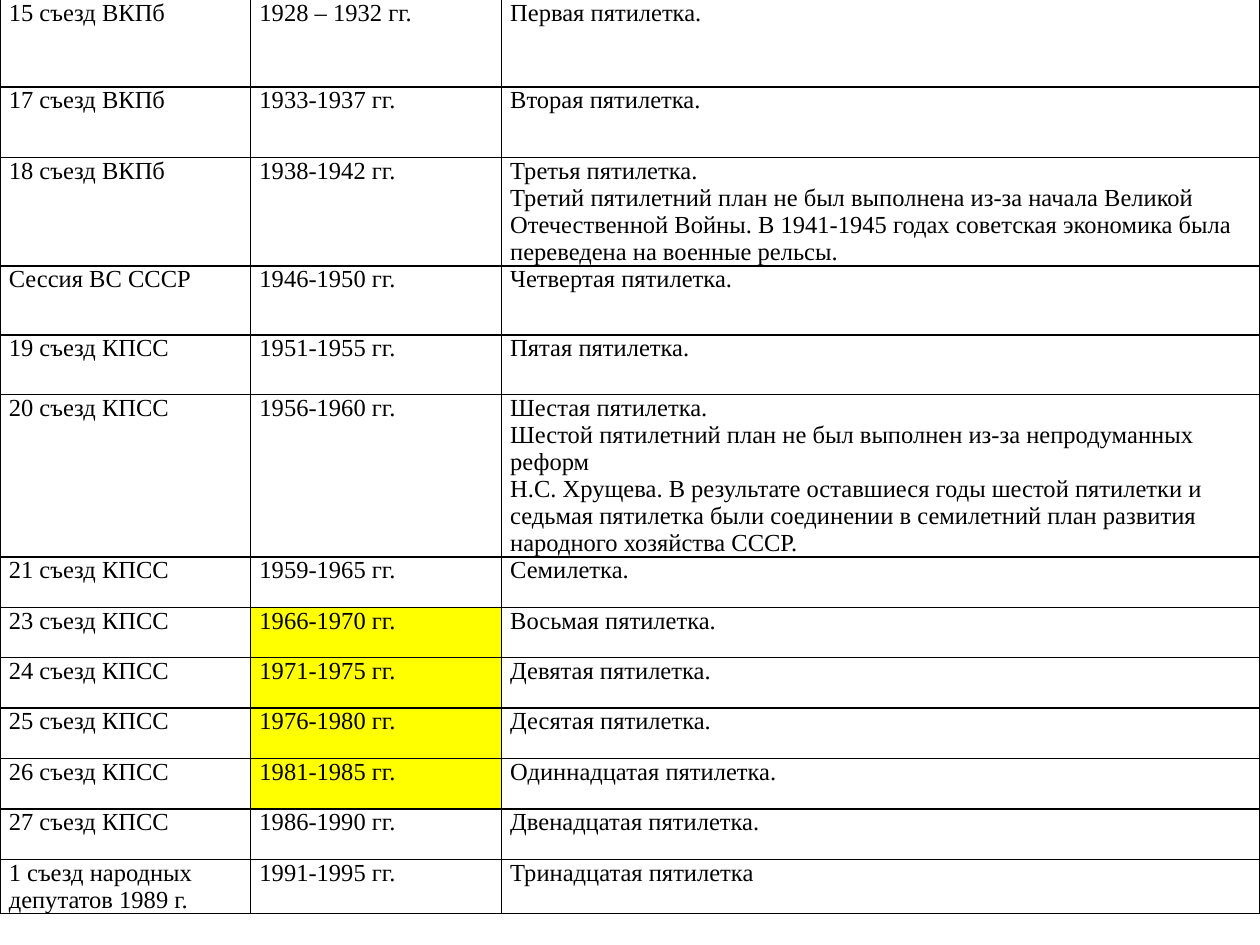
from lxml.etree import SubElement
from pptx import Presentation
from pptx.dml.color import RGBColor as Rgb
from pptx.oxml.ns import qn
from pptx.util import Inches, Pt

COLORS = {"ink": "000000", "mark": "FFFF00"}
GRID = (1000, 750)
COLS = (199, 199, 602)
TALL = 745

# Row height in grid rows, congress, years, paragraphs about the plan
PLANS = [
    (69, "15 съезд ВКПб", "1928 – 1932 гг.", ["Первая пятилетка."]),
    (56, "17 съезд ВКПб", "1933-1937 гг.", ["Вторая пятилетка."]),
    (72, "18 съезд ВКПб", "1938-1942 гг.", [
        "Третья пятилетка.",
        "Третий пятилетний план не был выполнена из-за начала Великой "
        "Отечественной Войны. В 1941-1945 годах советская экономика была "
        "переведена на военные рельсы."]),
    (55, "Сессия ВС СССР", "1946-1950 гг.", ["Четвертая пятилетка."]),
    (47, "19 съезд КПСС", "1951-1955 гг.", ["Пятая пятилетка."]),
    (86, "20 съезд КПСС", "1956-1960 гг.", [
        "Шестая пятилетка.",
        "Шестой пятилетний план не был выполнен из-за непродуманных реформ",
        "Н.С. Хрущева. В результате оставшиеся годы шестой пятилетки и "
        "седьмая пятилетка были соединении в семилетний план развития "
        "народного хозяйства СССР."]),
    (40, "21 съезд КПСС", "1959-1965 гг.", ["Семилетка."]),
    (40, "23 съезд КПСС", "1966-1970 гг.", ["Восьмая пятилетка."]),
    (40, "24 съезд КПСС", "1971-1975 гг.", ["Девятая пятилетка."]),
    (40, "25 съезд КПСС", "1976-1980 гг.", ["Десятая пятилетка."]),
    (40, "26 съезд КПСС", "1981-1985 гг.", ["Одиннадцатая пятилетка."]),
    (40, "27 съезд КПСС", "1986-1990 гг.", ["Двенадцатая пятилетка."]),
    (40, "1 съезд народных депутатов 1989 г.", "1991-1995 гг.",
     ["Тринадцатая пятилетка"]),
]
MARKED = {"1966-1970 гг.", "1971-1975 гг.", "1976-1980 гг.", "1981-1985 гг."}


class Deck:
    font, size, line, pad = "Times New Roman", Pt(14), Pt(1), Inches(0.07)

    def __init__(self):
        self.prs = Presentation()
        self.prs.slide_width, self.prs.slide_height = Inches(10), Inches(7.5)
        self.slide = self.prs.slides.add_slide(self.prs.slide_layouts[6])

    def wide(self, cols):
        return round(self.prs.slide_width * cols / GRID[0])

    def high(self, rows):
        return round(self.prs.slide_height * rows / GRID[1])

    def table(self, plans):
        frame = self.slide.shapes.add_table(
            len(plans), len(COLS), 0, 0, self.wide(sum(COLS)), self.high(TALL))
        grid = frame.table
        grid.first_row = grid.horz_banding = False
        for col, cols in zip(grid.columns, COLS):
            col.width = self.wide(cols)
        for n, (rows, group, years, notes) in enumerate(plans):
            grid.rows[n].height = self.high(rows)
            sides = "LRTB" if n else "LRB"
            for cell, text in zip(grid.rows[n].cells,
                                  (group, years, "\n".join(notes))):
                self.cell(cell, text, sides, text in MARKED)
        frame.height = self.high(TALL)

    def cell(self, cell, text, sides, marked):
        cell.margin_left = cell.margin_right = self.pad
        cell.margin_top = cell.margin_bottom = 0
        cell.text_frame.text = text
        for para in cell.text_frame.paragraphs:
            for run in para.runs:
                run.font.name, run.font.size = self.font, self.size
                run.font.bold = False
                run.font.color.rgb = Rgb.from_string(COLORS["ink"])
        self.edge(cell, sides)
        if marked:
            cell.fill.solid()
            cell.fill.fore_color.rgb = Rgb.from_string(COLORS["mark"])
        else:
            cell.fill.background()

    def edge(self, cell, sides):
        """Draw the cell borders; call before the fill, which follows them."""
        props = cell._tc.get_or_add_tcPr()
        for side in sides:
            line = SubElement(props, qn(f"a:ln{side}"), w=str(self.line))
            fill = SubElement(line, qn("a:solidFill"))
            SubElement(fill, qn("a:srgbClr"), val=COLORS["ink"])


def main():
    deck = Deck()
    deck.table(PLANS)
    deck.prs.save("out.pptx")


if __name__ == "__main__":
    main()
